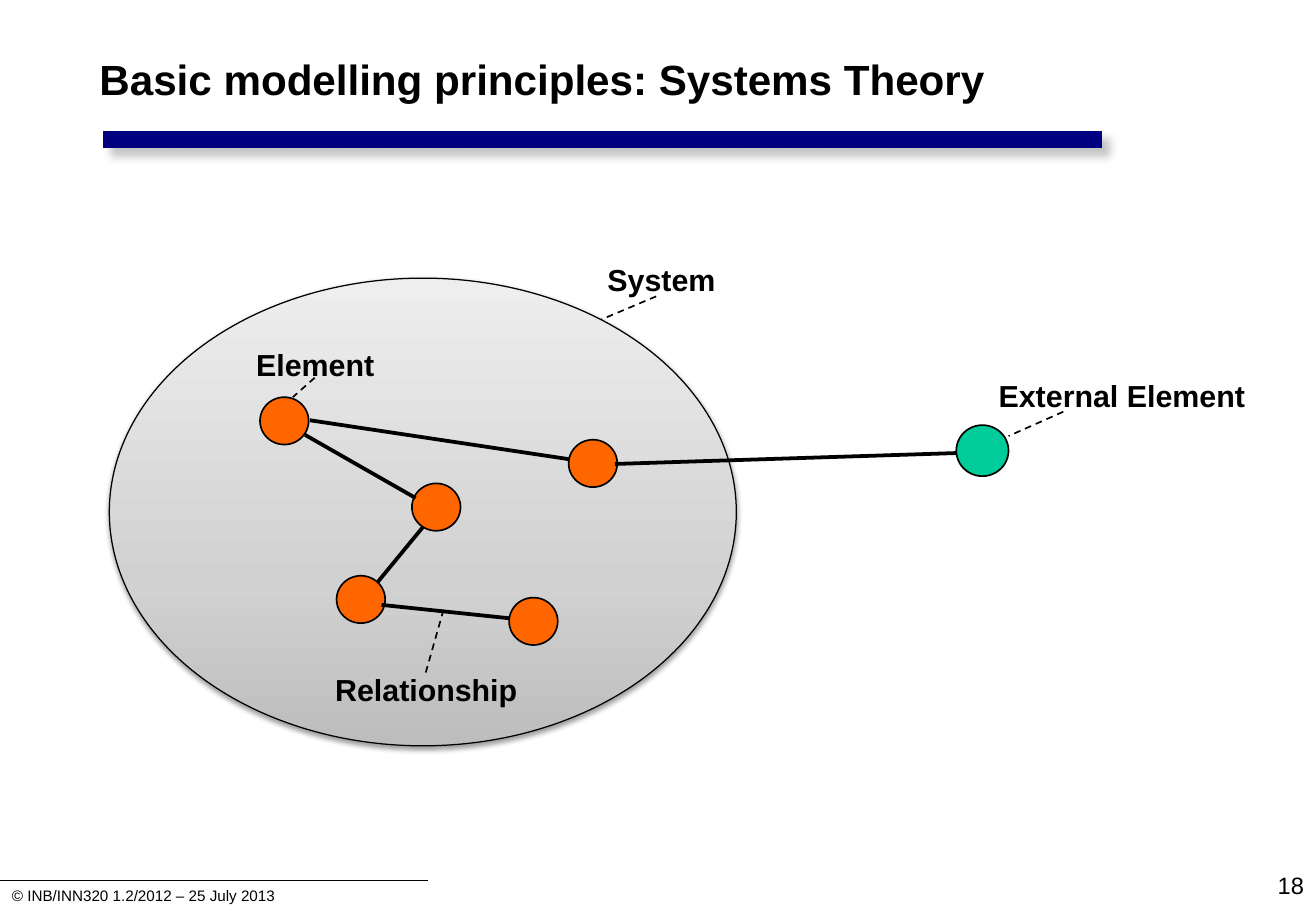
from copy import deepcopy

from lxml import etree
from pptx import Presentation
from pptx.dml.color import RGBColor
from pptx.enum.dml import MSO_LINE_DASH_STYLE as Dash
from pptx.enum.shapes import MSO_CONNECTOR_TYPE as Connector
from pptx.enum.shapes import MSO_SHAPE as Shape
from pptx.enum.text import MSO_ANCHOR as Anchor
from pptx.enum.text import PP_ALIGN as Align
from pptx.oxml.ns import qn
from pptx.util import Inches, Pt

COLORS = {
    "black": "000000",
    "rule": "000080",
    "rule_shadow": "B2B2B2",
    "element": "FF6600",
    "external": "00CC99",
    "system_dark": "BDBDBD",
    "system_mid": "D1D1D1",
    "system_light": "EEEEEE",
}
ELEMENT_SIZE = (0.4, 0.39)
ELEMENTS = [(1.24, 0.98), (3.78, 1.33), (2.49, 1.69), (1.87, 2.45), (3.29, 2.63)]
EXTERNAL_ELEMENT = (6.97, 1.21, 0.43, 0.42)
RELATIONSHIPS = [
    ((2.21, 2.5), (2.58, 2.05)),
    ((2.24, 2.69), (3.29, 2.8)),
    ((1.65, 1.17), (3.78, 1.49)),
    ((1.61, 1.29), (2.52, 1.81)),
    ((4.16, 1.53), (6.97, 1.44)),
]
LABELS = [
    ("System", (4, -0.19, 1.09), (4.5, 0.15), (4.05, 0.34)),
    ("Relationship", (1.76, 3.19, 1.7), (2.75, 2.73), (2.6, 3.26)),
    ("Element", (1.11, 0.51, 1.17), (1.69, 0.82), (1.51, 0.98)),
    ("External Element", (7.22, 0.77, 2.23), (7.85, 1.1), (7.4, 1.3)),
]


def color(name):
    """Return the named colour."""
    return RGBColor.from_string(COLORS[name])


def add_shadow(effects, name, opacity, blur, distance, angle):
    """Add an outer shadow to an effect list."""
    shadow = etree.SubElement(
        effects, qn("a:outerShdw"), blurRad=str(Pt(blur)), dist=str(Pt(distance)),
        dir=str(angle * 60000), algn="ctr", rotWithShape="0")
    tint = etree.SubElement(shadow, qn("a:srgbClr"), val=COLORS[name])
    etree.SubElement(tint, qn("a:alpha"), val=str(opacity * 1000))


def add_text(slide, box, text, size, bold=False, align=Align.LEFT, anchor=Anchor.TOP):
    """Add a single line of text in a box."""
    frame = slide.shapes.add_textbox(*map(Inches, box)).text_frame
    frame.word_wrap = False
    frame.vertical_anchor = anchor
    paragraph = frame.paragraphs[0]
    paragraph.alignment = align
    run = paragraph.add_run()
    run.text = text
    run.font.name = "Arial"
    run.font.size = Pt(size)
    run.font.bold = bold
    run.font.color.rgb = color("black")


def add_line(slide, start, end, width, name="black", dash=None):
    """Add a straight line and return its effect list."""
    line = slide.shapes.add_connector(Connector.STRAIGHT, *map(Inches, (*start, *end)))
    line.line.color.rgb = color(name)
    line.line.width = Pt(width)
    if dash:
        line.line.dash_style = dash
    return etree.SubElement(line._element.spPr, qn("a:effectLst"))


def add_ellipse(slide, box, width):
    """Add a black-outlined ellipse without shadow."""
    ellipse = slide.shapes.add_shape(Shape.OVAL, *map(Inches, box))
    ellipse.shadow.inherit = False
    ellipse.line.color.rgb = color("black")
    ellipse.line.width = Pt(width)
    return ellipse


def add_element(slide, box, name):
    """Add an element circle of the system diagram."""
    element = add_ellipse(slide, box, 1)
    element.fill.solid()
    element.fill.fore_color.rgb = color(name)


def add_system(slide, box):
    """Add the shaded ellipse that bounds the system."""
    system = add_ellipse(slide, box, 0.75)
    system.fill.gradient()
    system.fill.gradient_angle = 90
    properties = system._element.spPr
    stop_list = properties.find(".//" + qn("a:gsLst"))
    stop_list.insert(1, deepcopy(stop_list[0]))
    shades = [(0, "system_dark"), (0.35, "system_mid"), (1, "system_light")]
    for stop, (position, name) in zip(system.fill.gradient_stops, shades):
        stop.position = position
        stop.color.rgb = color(name)
    add_shadow(properties.find(qn("a:effectLst")), "black", 38, 3.1, 1.6, 90)


def add_header(slide, left, top, width):
    """Add the title and the rule below it."""
    add_text(slide, (left, top, 7.94, 0.67),
             "Basic modelling principles: Systems Theory", 25, bold=True)
    rule_left, rule_top = left + 0.13, top + 0.76
    effects = add_line(slide, (rule_left, rule_top), (rule_left + width, rule_top), 10, "rule")
    add_shadow(effects, "rule_shadow", 75, 5, 5.7, 45)


def add_diagram(slide, left, top, width, height):
    """Add the system with its elements, relationships and labels."""
    def place(x, y, *size):
        return (left + x, top + y, *size)

    add_system(slide, (left, top, width, height))
    for corner in ELEMENTS:
        add_element(slide, place(*corner, *ELEMENT_SIZE), "element")
    add_element(slide, place(*EXTERNAL_ELEMENT), "external")
    for start, end in RELATIONSHIPS:
        add_line(slide, place(*start), place(*end), 2.25)
    for text, box, start, end in LABELS:
        add_text(slide, place(*box, 0.4), text, 18, bold=True)
        add_line(slide, place(*start), place(*end), 1, dash=Dash.DASH)


def add_footer(slide, top, width):
    """Add the footer line, copyright text and slide number."""
    add_text(slide, (0, top, 2.38, 0.25), "© INB/INN320 1.2/2012 – 25 July 2013", 9)
    add_line(slide, (0, top), (3.52, top), 1)
    add_text(slide, (width - 1.35, top - 0.25, 1.35, 0.58), "18", 14,
             align=Align.RIGHT, anchor=Anchor.MIDDLE)


def main():
    """Build and save the presentation."""
    presentation = Presentation()
    presentation.slide_width = Inches(10.83)
    presentation.slide_height = Inches(7.5)
    slide = presentation.slides.add_slide(presentation.slide_layouts[6])
    add_header(slide, 0.72, 0.39, 8.22)
    add_footer(slide, 7.25, 10.83)
    add_diagram(slide, 0.9, 2.29, 5.16, 3.85)
    presentation.save("out.pptx")


if __name__ == "__main__":
    main()
